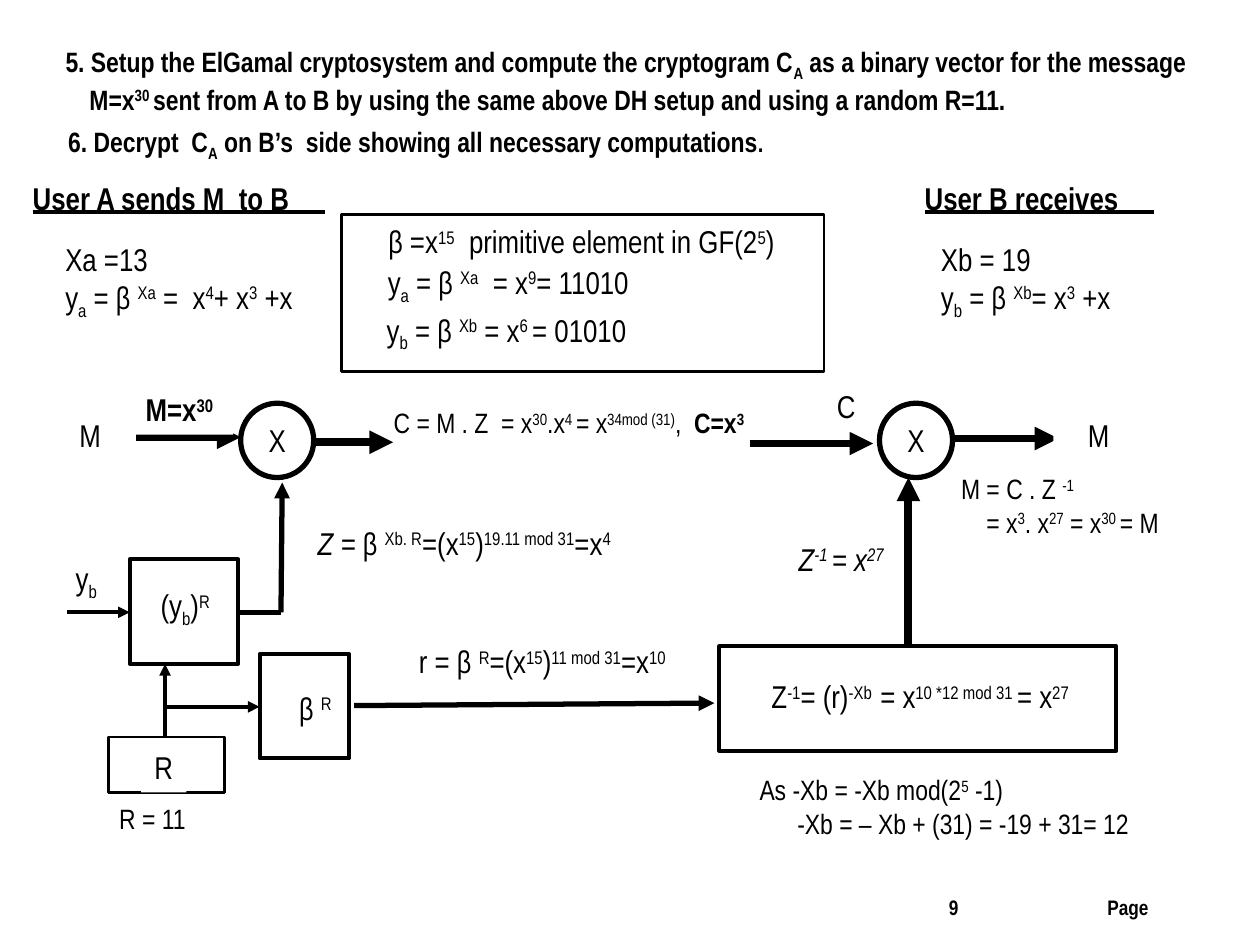
from pptx import Presentation
from pptx.dml.color import RGBColor as RGB
from pptx.enum.shapes import MSO_CONNECTOR as Conn, MSO_SHAPE as Kind
from pptx.enum.text import MSO_ANCHOR as Anchor, MSO_AUTO_SIZE as Fit, PP_ALIGN as Align
from pptx.oxml.ns import qn
from pptx.util import Inches, Pt
from lxml.etree import SubElement as Sub

FONT = "Arial Narrow"
INK, PAPER = "000000", "FFFFFF"
SIDES = {"l": Align.LEFT, "c": Align.CENTER}
BASES = {"^": "30000", "_": "-25000"}


def color(part, tone):
    part.rgb = RGB.from_string(tone)


def paint(shape, line=0):
    """White fill, with a black outline where a width is given."""
    shape.shadow.inherit = False
    shape.fill.solid()
    color(shape.fill.fore_color, PAPER)
    if line:
        color(shape.line.color, INK)
        shape.line.width = Pt(line)
    else:
        shape.line.fill.background()


def add_run(para, piece, size, bold, under):
    """Leading marks: ^ raised, _ lowered, * bold, / italic."""
    text = piece.lstrip("^_*/")
    marks = piece[:len(piece) - len(text)]
    run = para.add_run()
    run.text = text
    font = run.font
    font.name, font.size = FONT, Pt(size)
    font.bold = bold or "*" in marks
    font.italic = "/" in marks
    font.underline = under
    color(font.color, INK)
    for mark in marks:
        if mark in BASES:
            run._r.get_or_add_rPr().set("baseline", BASES[mark])


def write(shape, text, size=18, side="c", bold=False, under=False,
          wrap=True, top=False, dents=()):
    """Lines part at a newline, runs at a bar; dents are left margins."""
    frame = shape.text_frame
    frame.word_wrap = wrap
    frame.vertical_anchor = Anchor.TOP if top else Anchor.MIDDLE
    for row, line in enumerate(text.split("\n")):
        para = frame.add_paragraph() if row else frame.paragraphs[0]
        para.alignment = SIDES[side]
        if row < len(dents):
            para._p.get_or_add_pPr().set("marL", str(Inches(dents[row])))
        for piece in line.split("|"):
            add_run(para, piece, size, bold, under)
    return frame


def place(box):
    return [Inches(n) for n in box]


def add_box(slide, box, line, kind=Kind.RECTANGLE):
    shape = slide.shapes.add_shape(kind, *place(box))
    paint(shape, line)
    return shape


def add_text(slide, box, text, fill=False, **style):
    shape = slide.shapes.add_textbox(*place(box))
    if fill:
        paint(shape)
    frame = write(shape, text, **style)
    frame.auto_size = Fit.SHAPE_TO_FIT_TEXT
    return frame


def add_label(slide, box, text, **style):
    add_text(slide, box, text, fill=True, **style)


def add_line(slide, start, end, width, head=True):
    line = slide.shapes.add_connector(Conn.STRAIGHT, *place(start + end))
    color(line.line.color, INK)
    line.line.width = Pt(width)
    if head:
        Sub(line.line._get_or_add_ln(), qn("a:tailEnd"), type="triangle")
    Sub(line._element.spPr, qn("a:effectLst"))


def add_title(slide, box, text):
    title = slide.shapes.title
    title.left, title.top, title.width, title.height = place(box)
    frame = write(title, text, size=16, side="l", bold=True, top=True, dents=[0.19])
    frame.auto_size = Fit.NONE
    frame.paragraphs[0]._p.pPr.set("indent", str(Inches(-0.19)))


def add_page(slide):
    frame = add_text(slide, (6.87, 7.05, 2.58, 0.3), "Page\t9", size=12,
                     side="l", bold=True, dents=[1.82])
    tabs = Sub(frame.paragraphs[0]._p.pPr, qn("a:tabLst"))
    Sub(tabs, qn("a:tab"), pos=str(Inches(2.3)), algn="l")


def add_tasks(slide):
    add_title(slide, (0.42, 0.3, 9.49, 0.64),
              "5. Setup the ElGamal cryptosystem and compute the cryptogram C|_A"
              "| as a binary vector for the message M=x|^30 "
              "|sent from A to B by using the same above DH setup and using a random R=11.")
    frame = add_text(slide, (0.39, 0.94, 5.82, 0.37),
                     "6. Decrypt  C|_A| on B’s  side showing all necessary computations|.",
                     size=16, bold=True, wrap=False, top=True)
    frame.paragraphs[0].runs[-1].font.size = Pt(14)


def add_keys(slide):
    # Users and their keys
    for left, text in ((-0.04, "User A sends M  to B     "), (6.79, "User B receives     ")):
        add_text(slide, (left, 1.37, 2.92, 0.4), text, bold=True, under=True, top=True)
    add_text(slide, (0.42, 1.87, 2.5, 0.71),
             "Xa =13\ny|_a| = β |^Xa| =  x|^4|+ x|^3| +x", side="l")
    add_text(slide, (7.37, 1.87, 2.4, 0.71),
             "Xb = 19\ny|_b| = β |^Xb|= x|^3| +x", side="l")
    # Shared values
    add_box(slide, (2.71, 1.7, 3.83, 1.25), 1.5)
    add_text(slide, (2.95, 1.71, 3.33, 0.41),
             "β =x|^15|  primitive element in GF(2|^5|)", wrap=False)
    add_text(slide, (2.88, 2.05, 3.16, 0.41),
             "y|_a| = β |^Xa|  = x|^9|= 11010", side="l", dents=[0.1])
    add_text(slide, (2.74, 2.43, 3.41, 0.41),
             "y|_b| = β |^Xb| = x|^6 |= 01010", side="l", dents=[0.23])


def add_sender(slide):
    # Boxes
    for box, line in (((1.03, 4.44, 0.86, 0.83), 2.25), ((0.86, 5.85, 0.92, 0.44), 1.5),
                      ((2.06, 5.19, 0.71, 0.83), 2.25)):
        add_box(slide, box, line)
    add_label(slide, (1.16, 4.62, 0.62, 0.41), "(y|_b|)|^R")
    add_label(slide, (1.12, 5.88, 0.36, 0.41), "R")
    add_label(slide, (2.2, 5.41, 0.55, 0.41), " β |^R")
    add_label(slide, (0.7, 6.31, 0.97, 0.37), " R = 11", size=16)
    add_label(slide, (0.4, 4.4, 0.57, 0.41), "y|_b")
    # Encryption
    add_line(slide, (1.08, 3.47), (1.91, 3.47), 4.5)
    add_label(slide, (1.03, 3.05, 0.82, 0.4), "M=x|^30 ", bold=True, wrap=False, top=True)
    add_label(slide, (0.53, 3.25, 0.37, 0.41), "M", wrap=False)
    add_label(slide, (2.92, 3.17, 3.19, 0.37),
              "C = M . Z  = x|^30|.x|^4 |= x|^34mod (31)|,  |*C=x|*^3", size=16)
    add_label(slide, (2.28, 4.1, 2.81, 0.41),
              "/Z = |β |^Xb. R|=(x|^15|)|^19.11 mod 31|=x|^4")
    add_label(slide, (3.14, 5.04, 2.33, 0.41),
              "r = β |^R|=(x|^15|)|^11 mod 31|=x|^10", wrap=False)
    # Flow
    add_line(slide, (1.89, 4.86), (2.23, 4.86), 3, head=False)
    for start, end, width in (((2.23, 4.86), (2.24, 3.83), 3),
                              ((0.53, 4.86), (1.03, 4.86), 2.25),
                              ((1.31, 5.86), (1.31, 5.27), 2.25),
                              ((1.31, 5.61), (2.06, 5.61), 2.25),
                              ((2.81, 5.6), (5.67, 5.58), 3),
                              ((2.51, 3.51), (3.12, 3.51), 4.5)):
        add_line(slide, start, end, width)


def add_receiver(slide):
    # Decryption key
    add_box(slide, (5.71, 5.13, 3.15, 0.83), 2.25)
    add_label(slide, (5.76, 5.32, 3.03, 0.41),
              " Z|^-1|= (r)|^-Xb  |= x|^10 *12 mod 31 |= x|^27")
    add_label(slide, (5.93, 6.08, 3.46, 0.64),
              "As -Xb = -Xb mod(2|^5| -1)\n-Xb = – Xb + (31) = -19 + 31= 12",
              size=16, side="l", dents=[0, 0.3])
    add_label(slide, (6.24, 4.23, 0.93, 0.41), "/Z|/^-1 |/= x|/^27", side="l")
    # Flow
    add_line(slide, (7.57, 3.48), (8.4, 3.48), 4.5)
    add_line(slide, (5.95, 3.52), (6.93, 3.52), 4.5)
    add_label(slide, (8.36, 3.25, 0.72, 0.41), "M")
    add_label(slide, (6.54, 3.02, 0.35, 0.41), "C", wrap=False)
    add_line(slide, (7.21, 5.13), (7.21, 3.79), 4.5)
    add_label(slide, (7.53, 3.69, 1.86, 0.64),
              "M = C . Z |^-1\n= x|^3|. x|^27| = x|^30 |= M",
              size=16, side="l", dents=[0, 0.2])


def main():
    deck = Presentation()
    deck.slide_width, deck.slide_height = Inches(10), Inches(7.5)
    slide = deck.slides.add_slide(deck.slide_layouts[5])
    add_page(slide)
    add_tasks(slide)
    add_keys(slide)
    add_sender(slide)
    add_receiver(slide)
    # Multipliers
    for left in (1.91, 6.98):
        ring = add_box(slide, (left, 3.2, 0.58, 0.59), 3, Kind.OVAL)
        write(ring, "X", wrap=False)
    deck.save("out.pptx")


if __name__ == "__main__":
    main()
